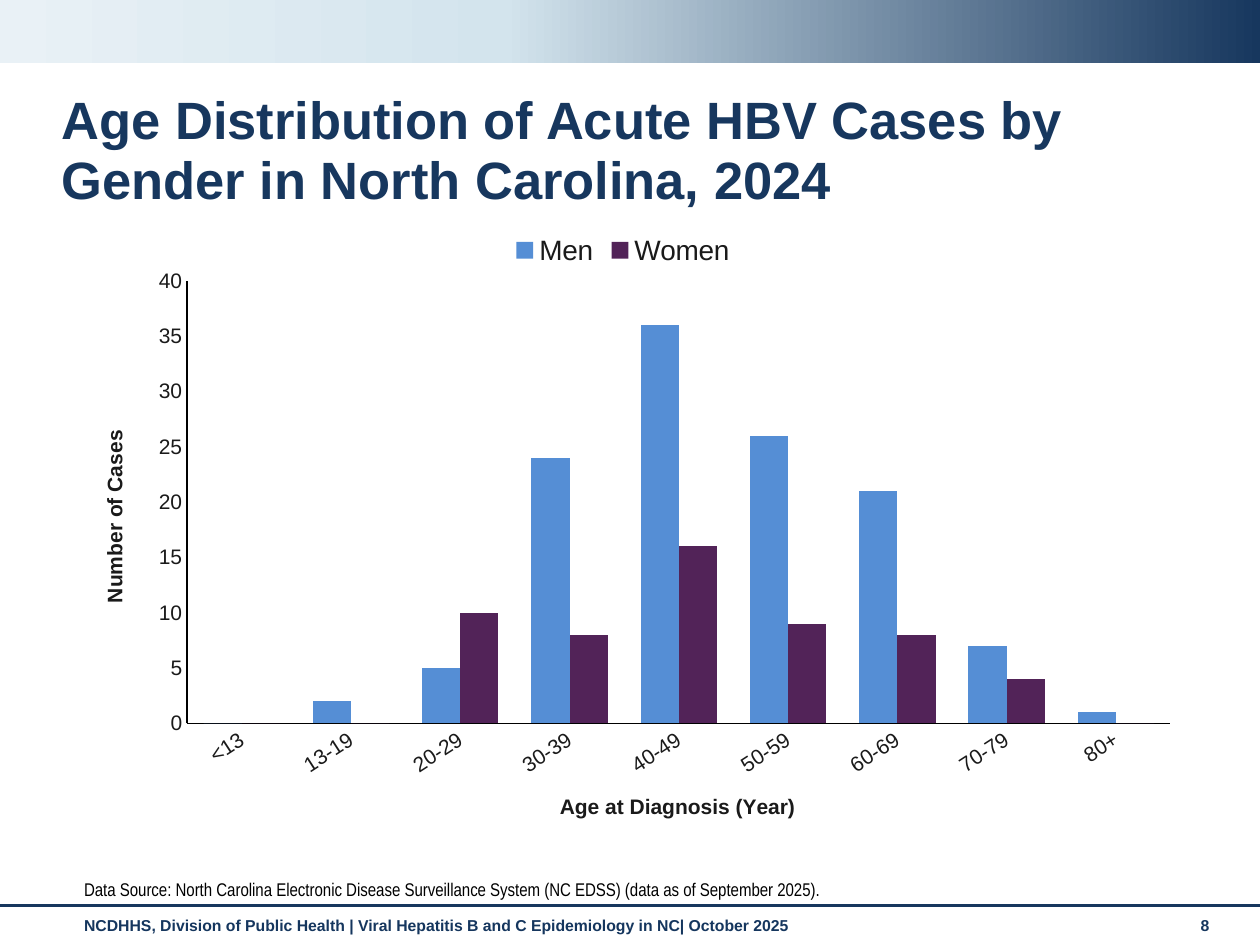
"""Build the slide on acute HBV cases by age and gender."""
import copy
from dataclasses import dataclass
from typing import Any, NamedTuple

import lxml.etree
import pptx
import pptx.chart.data
import pptx.dml.color
import pptx.enum.chart
import pptx.enum.shapes
import pptx.enum.text
import pptx.oxml.ns
import pptx.util

Pt = pptx.util.Pt
RGB = pptx.dml.color.RGBColor.from_string
qn = pptx.oxml.ns.qn
Anchor = pptx.enum.text.MSO_ANCHOR


@dataclass(frozen=True)
class Theme:
    """Colours, fonts and type sizes of the slide."""
    navy: str = "17375E"
    footer: str = "15365E"
    black: str = "000000"
    chart_text: str = "1A1A1A"
    men: str = "558ED5"
    women: str = "522358"
    band: tuple = ((0, "E9F1F6"), (0.4, "D3E4ED"), (1, "17375E"))
    face: str = "Arial"
    narrow: str = "Arial Narrow"
    title_size: float = 30
    legend_size: float = 16
    axis_size: float = 12
    source_size: float = 10.5
    footer_size: float = 9


class Frame(NamedTuple):
    """Left, top, width and height in points."""
    left: float
    top: float
    width: float
    height: float


@dataclass(frozen=True)
class Label:
    """One line of text with its place and format."""
    text: str
    frame: Frame
    size: float
    color: str
    face: str
    bold: bool
    anchor: Any = Anchor.TOP


@dataclass(frozen=True)
class Series:
    """One set of columns."""
    name: str
    values: tuple
    color: str


THEME = Theme()
PAGE_WIDTH = 720
RULE_TOP = 517.5
AGES = ("<13", "13-19", "20-29", "30-39", "40-49", "50-59", "60-69", "70-79", "80+")
SERIES = (
    Series("Men", (0, 2, 5, 24, 36, 26, 21, 7, 1), THEME.men),
    Series("Women", (0, 0, 10, 8, 16, 9, 8, 4, 0), THEME.women),
)
TITLE = Label("Age Distribution of Acute HBV Cases by Gender in North Carolina, 2024",
              Frame(28, 49, 692, 43), THEME.title_size, THEME.navy, THEME.face, True)
FOOTER = (THEME.footer_size, THEME.footer, THEME.face, True)
LABELS = (
    Label("NCDHHS, Division of Public Health | Viral Hepatitis B and C Epidemiology in NC| October 2025",
          Frame(41, 520, 629, 21), *FOOTER),
    Label("8", Frame(679, 520, 32, 21), *FOOTER),
    Label("Data Source: North Carolina Electronic Disease Surveillance System (NC EDSS) "
          "(data as of September 2025).", Frame(41, 492, 629, 26),
          THEME.source_size, THEME.black, THEME.narrow, False, Anchor.BOTTOM),
)


def apply(target: Any, formats: dict) -> None:
    """Set each named attribute on the target."""
    for name, value in formats.items():
        setattr(target, name, value)


def set_font(font: Any, size: float, color: str, face: str, bold: bool) -> None:
    """Format a font."""
    apply(font, {"size": Pt(size), "name": face, "bold": bold})
    font.color.rgb = RGB(color)


def write_label(box: Any, label: Label) -> None:
    """Place a text shape and write its label."""
    apply(box, {name: Pt(value) for name, value in label.frame._asdict().items()})
    apply(box.text_frame, {"word_wrap": True, "vertical_anchor": label.anchor,
                           "auto_size": pptx.enum.text.MSO_AUTO_SIZE.NONE})
    para = box.text_frame.paragraphs[0]
    para.alignment = pptx.enum.text.PP_ALIGN.LEFT
    span = para.add_run()
    span.text = label.text
    set_font(span.font, label.size, label.color, label.face, label.bold)


def draw_band(page: Any) -> None:
    """Draw the gradient band along the top."""
    band = page.shapes.add_shape(pptx.enum.shapes.MSO_SHAPE.RECTANGLE, 0, 0, Pt(PAGE_WIDTH), Pt(36))
    band.shadow.inherit = False
    band.line.fill.background()
    band.fill.gradient()
    band.fill.gradient_angle = 0
    stops = band._element.spPr.find(".//" + qn("a:gsLst"))
    stops.append(copy.deepcopy(stops[0]))
    for stop, (position, color) in zip(band.fill.gradient_stops, THEME.band):
        stop.position = position
        stop.color.rgb = RGB(color)


def draw_rule(page: Any) -> None:
    """Draw the line above the footer."""
    rule = page.shapes.add_connector(pptx.enum.shapes.MSO_CONNECTOR.STRAIGHT,
                                     0, Pt(RULE_TOP), Pt(PAGE_WIDTH), Pt(RULE_TOP))
    rule.line.color.rgb = RGB(THEME.navy)
    rule.line.width = Pt(1.75)
    lxml.etree.SubElement(rule._element.spPr, qn("a:effectLst"))


def set_layout(parent: Any, index: int, values: dict) -> None:
    """Give a chart part a manual layout."""
    for old in parent.findall(qn("c:layout")):
        parent.remove(old)
    layout = lxml.etree.Element(qn("c:layout"))
    manual = lxml.etree.SubElement(layout, qn("c:manualLayout"))
    for name, value in values.items():
        lxml.etree.SubElement(manual, qn(f"c:{name}")).set("val", str(value))
    parent.insert(index, layout)


def format_axis(axis: Any, title: str, left: float, top: float) -> None:
    """Format an axis and place its title."""
    no_tick = pptx.enum.chart.XL_TICK_MARK.NONE
    apply(axis, {"has_major_gridlines": False, "major_tick_mark": no_tick,
                 "minor_tick_mark": no_tick})
    axis.format.line.color.rgb = RGB(THEME.black)
    axis.format.line.width = Pt(1)
    set_font(axis.tick_labels.font, THEME.axis_size, THEME.chart_text, THEME.face, False)
    span = axis.axis_title.text_frame.paragraphs[0].add_run()
    span.text = title
    set_font(span.font, THEME.axis_size, THEME.chart_text, THEME.face, True)
    set_layout(axis.axis_title._element, 1,
               {"xMode": "edge", "yMode": "edge", "x": left, "y": top})


def draw_chart(page: Any, frame: Frame) -> None:
    """Draw the clustered columns of cases by age."""
    data = pptx.chart.data.CategoryChartData()
    data.categories = AGES
    for series in SERIES:
        data.add_series(series.name, series.values)
    kind = pptx.enum.chart.XL_CHART_TYPE.COLUMN_CLUSTERED
    chart = page.shapes.add_chart(kind, *map(Pt, frame), data).chart
    apply(chart, {"has_title": False, "has_legend": True})
    set_font(chart.font, THEME.axis_size, THEME.chart_text, THEME.face, False)
    apply(chart.legend, {"position": pptx.enum.chart.XL_LEGEND_POSITION.TOP,
                         "include_in_layout": False})
    set_font(chart.legend.font, THEME.legend_size, THEME.chart_text, THEME.face, False)
    plot = chart.plots[0]
    apply(plot, {"gap_width": 86, "overlap": 0, "vary_by_categories": False})
    for columns, series in zip(plot.series, SERIES):
        columns.format.fill.solid()
        columns.format.fill.fore_color.rgb = RGB(series.color)
    format_axis(chart.category_axis, "Age at Diagnosis (Year)", 0.44, 0.94)
    format_axis(chart.value_axis, "Number of Cases", 0.03, 0.34)
    apply(chart.value_axis, {"minimum_scale": 0, "maximum_scale": 40, "major_unit": 5})
    labels = chart.category_axis._element.find(qn("c:txPr")).find(qn("a:bodyPr"))
    labels.set("rot", str(-33 * 60000))
    set_layout(chart._chartSpace.chart.plotArea, 0,
               {"layoutTarget": "inner", "xMode": "edge", "yMode": "edge",
                "x": 0.11, "y": 0.1, "w": 0.88, "h": 0.73})


def main() -> None:
    """Build and save the deck."""
    deck = pptx.Presentation()
    apply(deck, {"slide_width": Pt(PAGE_WIDTH), "slide_height": Pt(540)})
    page = deck.slides.add_slide(deck.slide_layouts[5])
    draw_band(page)
    draw_rule(page)
    write_label(page.shapes.title, TITLE)
    page.shapes.title.text_frame.paragraphs[0].line_spacing = 0.95
    draw_chart(page, Frame(36.7, 126, 638.6, 346.3))
    for label in LABELS:
        write_label(page.shapes.add_textbox(*map(Pt, label.frame)), label)
    deck.save("out.pptx")


if __name__ == "__main__":
    main()
